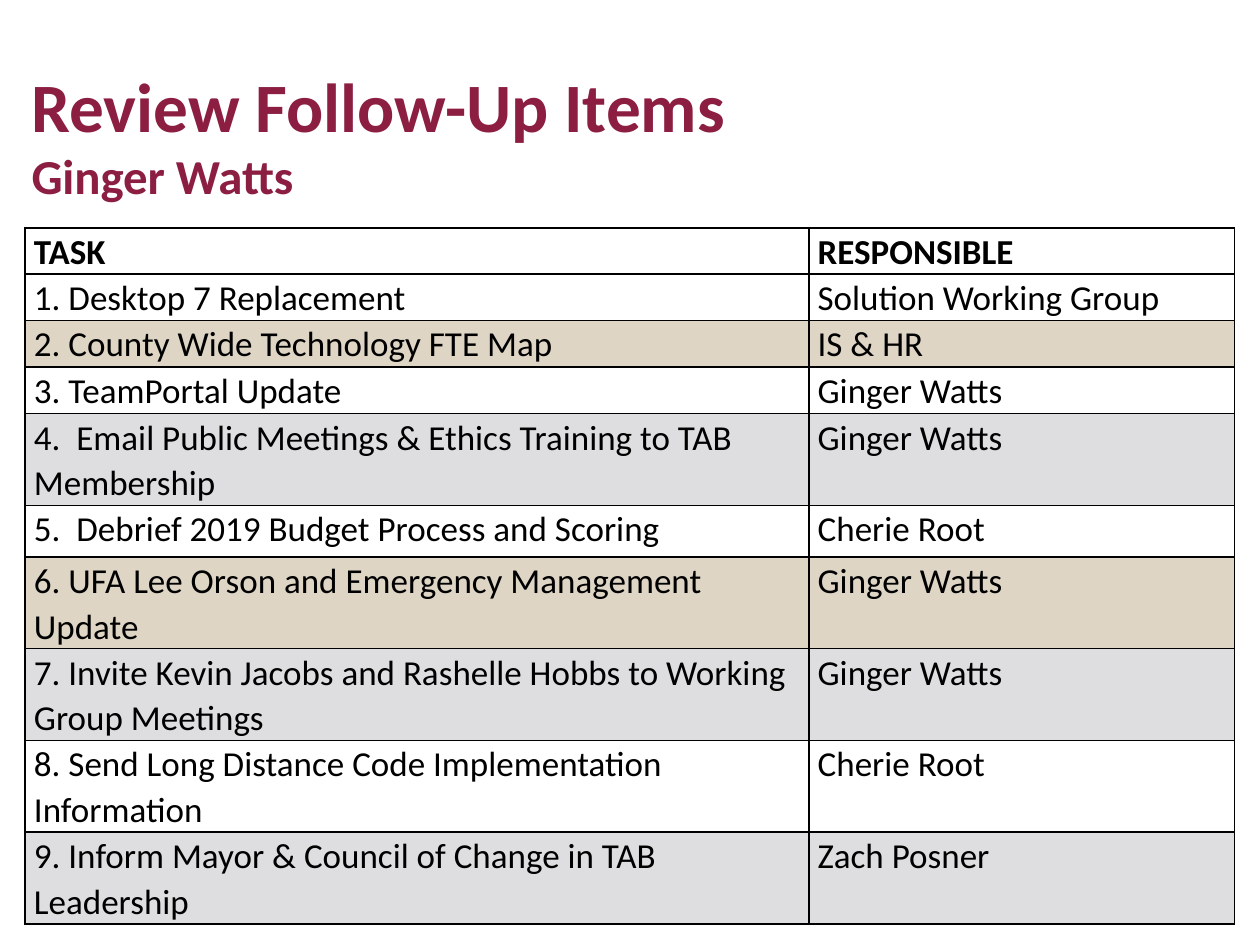
from lxml import etree
from pptx import Presentation
from pptx.dml.color import RGBColor
from pptx.enum.text import MSO_ANCHOR, PP_ALIGN
from pptx.oxml.ns import qn
from pptx.util import Inches, Pt

TOP, LEFT = MSO_ANCHOR.TOP, PP_ALIGN.LEFT
MAROON = RGBColor(0x8B, 0x1E, 0x41)
BLACK = RGBColor(0, 0, 0)
WHITE = RGBColor(0xFF, 0xFF, 0xFF)
TAN = RGBColor(0xDE, 0xD5, 0xC5)
GRAY = RGBColor(0xDE, 0xDE, 0xE0)
FONT = "Calibri"

# Content
TITLE = [("Review Follow-Up Items", 39.6), ("Ginger Watts", 27.9)]
# task, responsible, fill, row height in inches
TASKS = [
    ("TASK", "RESPONSIBLE", None, 0.32),
    ("1. Desktop 7 Replacement", "Solution Working Group", None, 0.37),
    ("2. County Wide Technology FTE Map", "IS & HR", TAN, 0.37),
    ("3. TeamPortal Update", "Ginger Watts", None, 0.37),
    ("4.  Email Public Meetings & Ethics Training to TAB Membership",
     "Ginger Watts", GRAY, 0.66),
    ("5.  Debrief 2019 Budget Process and Scoring", "Cherie Root", WHITE, 0.41),
    ("6. UFA Lee Orson and Emergency Management Update",
     "Ginger Watts", TAN, 0.41),
    ("7. Invite Kevin Jacobs and Rashelle Hobbs to Working Group Meetings",
     "Ginger Watts", GRAY, 0.41),
    ("8. Send Long Distance Code Implementation Information",
     "Cherie Root", WHITE, 0.66),
    ("9. Inform Mayor & Council of Change in TAB Leadership",
     "Zach Posner", GRAY, 0.66),
]
COLUMNS = [6.22, 3.38]
SIDE_MARGIN = 0.07


def set_all(target, values):
    for name, value in values.items():
        setattr(target, name, value)


def add_borders(cell):
    properties = cell._tc.get_or_add_tcPr()
    for position, side in enumerate(("lnL", "lnR", "lnT", "lnB")):
        line = etree.Element(qn(f"a:{side}"), w=str(Pt(1)))
        fill = etree.SubElement(line, qn("a:solidFill"))
        etree.SubElement(fill, qn("a:srgbClr"), val=str(BLACK))
        properties.insert(position, line)


def fill_cell(cell, text, color, bold):
    set_all(cell, dict(margin_left=Inches(SIDE_MARGIN), margin_right=Inches(SIDE_MARGIN),
                       margin_top=0, margin_bottom=0, vertical_anchor=TOP))
    if color is None:
        cell.fill.background()
    else:
        cell.fill.solid()
        cell.fill.fore_color.rgb = color
    para = cell.text_frame.paragraphs[0]
    set_all(para, dict(line_spacing=1.07, alignment=LEFT))
    span = para.add_run()
    span.text = text
    set_all(span.font, dict(name=FONT, size=Pt(20), bold=bold))
    span.font.color.rgb = BLACK
    add_borders(cell)


deck = Presentation()
deck.slide_width, deck.slide_height = Inches(10), Inches(7.5)
page = deck.slides.add_slide(deck.slide_layouts[5])

# Title and presenter
title = page.shapes.title
set_all(title, dict(left=Inches(0.25), top=Inches(0.5),
                    width=Inches(9), height=Inches(0.75)))
frame = title.text_frame
set_all(frame, dict(margin_left=0, margin_right=0, margin_top=0, margin_bottom=0,
                    vertical_anchor=TOP, word_wrap=True))
para = frame.paragraphs[0]
para.alignment = LEFT
for number, (text, size) in enumerate(TITLE):
    if number:
        para.add_line_break()
    span = para.add_run()
    span.text = text
    set_all(span.font, dict(name=FONT, size=Pt(size), bold=True))
    span.font.color.rgb = MAROON

# Follow-up table
table = page.shapes.add_table(
    len(TASKS), len(COLUMNS), Inches(0.2), Inches(1.81),
    Inches(sum(COLUMNS)), Inches(sum(task[-1] for task in TASKS))).table
set_all(table, dict(first_row=False, horz_banding=False))
for column, width in zip(table.columns, COLUMNS):
    column.width = Inches(width)
for number, (task, responsible, color, height) in enumerate(TASKS):
    table.rows[number].height = Inches(height)
    for cell, text in zip(table.rows[number].cells, (task, responsible)):
        fill_cell(cell, text, color, bold=number == 0)

deck.save("out.pptx")
